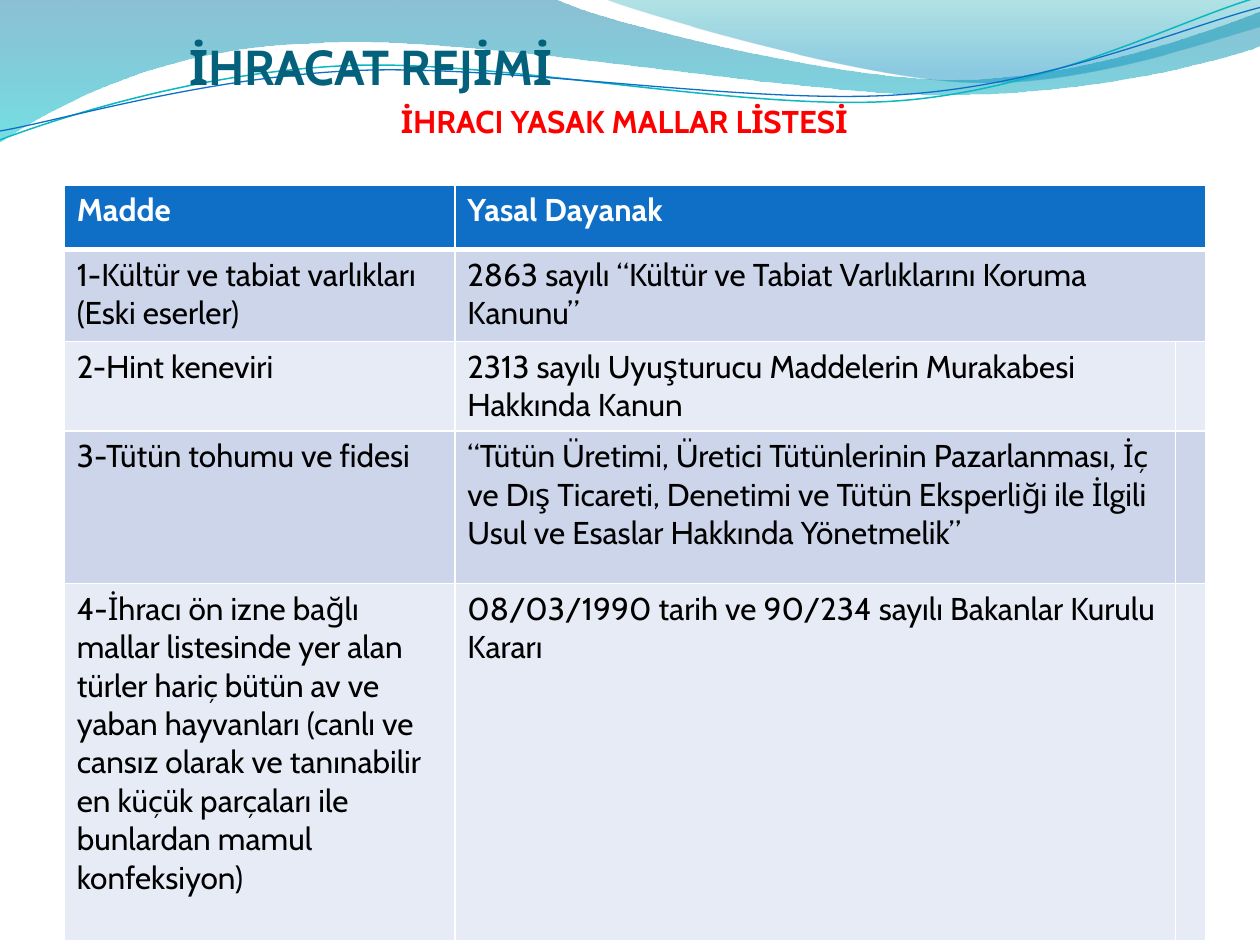
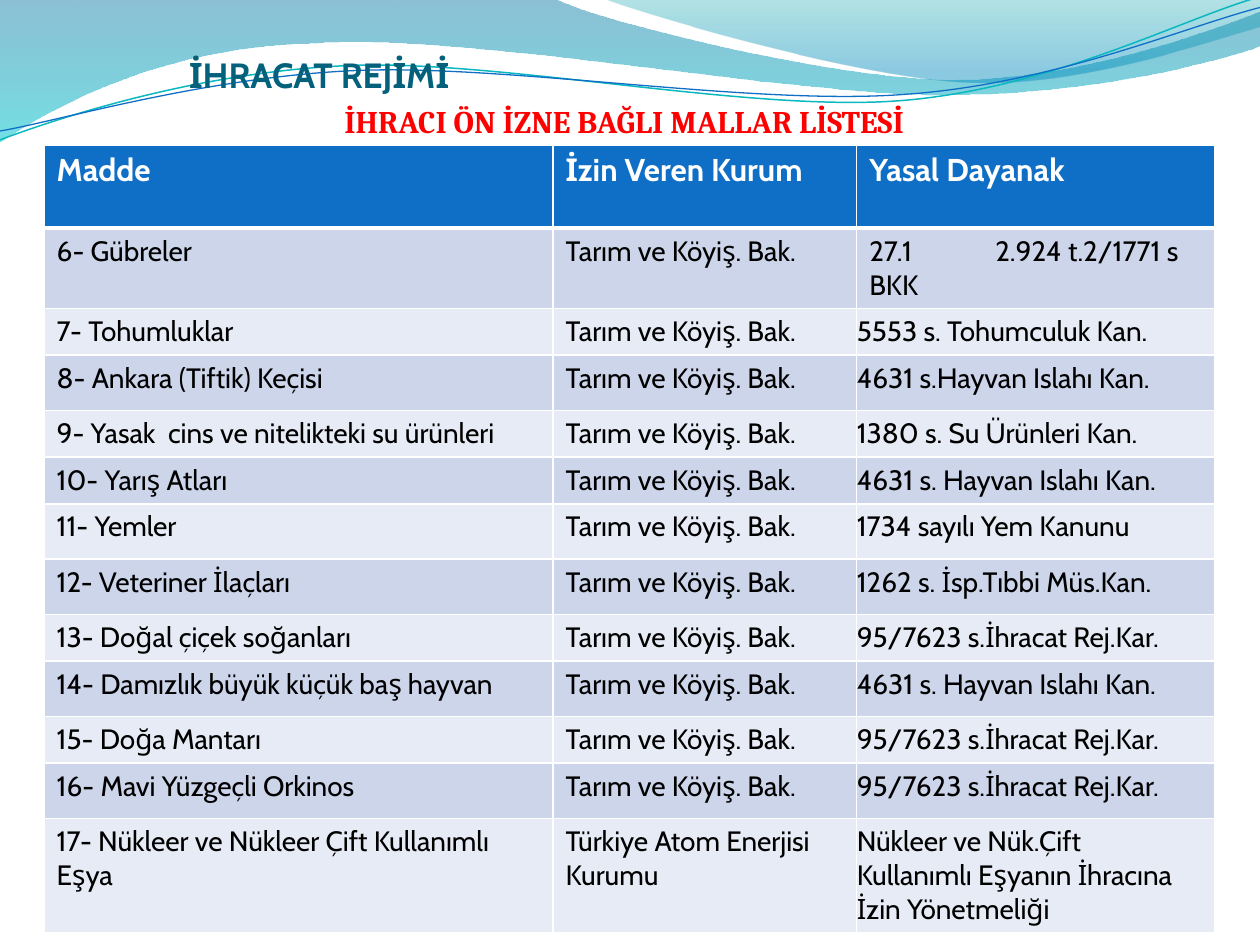
import math

import pptx
import pptx.util
import pptx.dml.color
import pptx.enum.text
import pptx.oxml
import pptx.oxml.ns

Inches = pptx.util.Inches
Pt = pptx.util.Pt
ALIGN = pptx.enum.text.PP_ALIGN
ANCHOR = pptx.enum.text.MSO_ANCHOR
qn = pptx.oxml.ns.qn
NS = pptx.oxml.ns.nsdecls("a")

COLORS = {
    "title": "04617B", "alert": "FF0000", "text": "000000", "white": "FFFFFF",
    "head": "0F6FC6", "odd": "CCD5EA", "even": "E7EBF5",
    "deep": "0074A1", "aqua": "00C6CF", "teal": "00A1A9", "sky": "008BBF",
    "cyan": "0AB8BF",
}

# Each wave is a list of points: two for a line, six for a Bezier curve.
BAND = [(0, 0), (4.4, -0.01), (4.76, 0.17, 6.64, 0.63, 7.58, 0.63),
        (8.53, 0.63, 9.58, 0.26, 10, 0.09), (10.01, 0.36),
        (9.83, 0.44, 8.7, 0.76, 7.46, 0.75), (6.22, 0.75, 3.82, 0.28, 2.57, 0.34),
        (1.29, 0.36, 0.46, 0.83, -0.01, 1.13), (0, 0)]
CREST = [(4.79, -0.01), (5.09, 0.11, 6.82, 0.62, 7.69, 0.65),
         (8.56, 0.69, 9.61, 0.32, 10, 0.21), (10, 0), (4.79, -0.01)]
UPPER = [(0, 1.11), (0.48, 0.93, 1.58, 0.57, 2.77, 0.52),
         (3.95, 0.47, 5.93, 0.89, 7.13, 0.8), (8.33, 0.71, 9.38, 0.15, 9.98, -0.02)]
LOWER = [(0, 1.04), (0.47, 0.96, 1.64, 0.61, 2.83, 0.56),
         (4.03, 0.51, 5.97, 0.84, 7.17, 0.75), (8.36, 0.67, 9.41, 0.21, 10, 0.06)]
TILT = 2.7

BANNED = [
    ["Madde", "Yasal Dayanak", ""],
    ["1-Kültür ve tabiat varlıkları (Eski eserler)",
     "2863 sayılı “Kültür ve Tabiat Varlıklarını Koruma Kanunu”", ""],
    ["2-Hint keneviri",
     "2313 sayılı Uyuşturucu Maddelerin Murakabesi Hakkında Kanun", ""],
    ["3-Tütün tohumu ve fidesi",
     "“Tütün Üretimi, Üretici Tütünlerinin Pazarlanması, İç ve Dış Ticareti, "
     "Denetimi ve Tütün Eksperliği ile İlgili Usul ve Esaslar Hakkında Yönetmelik”", ""],
    ["4-İhracı ön izne bağlı mallar listesinde yer alan türler hariç bütün av ve "
     "yaban hayvanları (canlı ve cansız olarak ve tanınabilir en küçük parçaları "
     "ile bunlardan mamul konfeksiyon)",
     "08/03/1990 tarih ve 90/234 sayılı Bakanlar Kurulu Kararı", ""],
]

FARM = "Tarım ve Köyiş. Bak."
PERMIT = [
    ["Madde", "İzin Veren Kurum", "Yasal Dayanak"],
    ["6- Gübreler", FARM, "27.1\t2.924 t.2/1771 s BKK"],
    ["7- Tohumluklar", FARM, "5553 s. Tohumculuk Kan."],
    ["8- Ankara (Tiftik) Keçisi", FARM, "4631 s.Hayvan Islahı Kan."],
    ["9- Yasak  cins ve nitelikteki su ürünleri", FARM, "1380 s. Su Ürünleri Kan."],
    ["10- Yarış Atları", FARM, "4631 s. Hayvan Islahı Kan."],
    ["11- Yemler", FARM, "1734 sayılı Yem Kanunu"],
    ["12- Veteriner İlaçları", FARM, "1262 s. İsp.Tıbbi Müs.Kan."],
    ["13- Doğal çiçek soğanları", FARM, "95/7623 s.İhracat Rej.Kar."],
    ["14- Damızlık büyük küçük baş hayvan", FARM, "4631 s. Hayvan Islahı Kan."],
    ["15- Doğa Mantarı", FARM, "95/7623 s.İhracat Rej.Kar."],
    ["16- Mavi Yüzgeçli Orkinos", FARM, "95/7623 s.İhracat Rej.Kar."],
    ["17- Nükleer ve Nükleer Çift Kullanımlı Eşya", "Türkiye Atom Enerjisi Kurumu",
     "Nükleer ve Nük.Çift Kullanımlı Eşyanın İhracına İzin Yönetmeliği"],
]


def tint(name):
    return pptx.dml.color.RGBColor.from_string(COLORS[name])


def write(frame, text, size=18, color="text", font="Cabin", bold=False, align=ALIGN.LEFT):
    """Fill the first paragraph; a tab in the text leads to one inch."""
    para = frame.paragraphs[0]
    para.alignment = align
    if "\t" in text:
        para._p.get_or_add_pPr().append(pptx.oxml.parse_xml(
            f'<a:tabLst {NS}><a:tab pos="{Inches(1)}" algn="l"/></a:tabLst>'))
    run = para.add_run()
    run.text = text
    run.font.name = font
    run.font.size = Pt(size)
    run.font.bold = bold
    run.font.color.rgb = tint(color)
    return para


def place(shape, left, top, width, height):
    shape.left, shape.top = Inches(left), Inches(top)
    shape.width, shape.height = Inches(width), Inches(height)


def turn(point, pivot, angle):
    """Turn a point clockwise about a pivot."""
    x, y = point[0] - pivot[0], point[1] - pivot[1]
    sin, cos = math.sin(math.radians(angle)), math.cos(math.radians(angle))
    return pivot[0] + x * cos - y * sin, pivot[1] + x * sin + y * cos


def draw(slide, parts, close=False, pivot=(0, 0), angle=0):
    """Build lines through all points, then bend each triple into a curve."""
    dots = [turn(part[i:i + 2], pivot, angle) for part in parts for i in range(0, len(part), 2)]
    dots = [(Inches(x), Inches(y)) for x, y in dots]
    pen = slide.shapes.build_freeform(*dots[0], scale=1.0)
    pen.add_line_segments(dots[1:], close=close)
    shape = pen.convert_to_shape()
    shape.shadow.inherit = False
    shape.rotation = -angle % 360
    lines = iter(list(shape.element.spPr.iter(qn("a:lnTo"))))
    for part in parts[1:]:
        line = next(lines)
        if len(part) == 6:
            curve = pptx.oxml.parse_xml(f"<a:cubicBezTo {NS}/>")
            line.addprevious(curve)
            for item in (line, next(lines), next(lines)):
                curve.append(item[0])
                item.getparent().remove(item)
    return shape


def add_wave(slide, parts, stops):
    """Add a filled wave; each stop is colour, position and opacity in percent."""
    shape = draw(slide, parts, close=True)
    shape.line.fill.background()
    shape.fill.gradient()
    shape.fill.gradient_angle = 270
    for stop, (color, spot, _) in zip(shape.fill.gradient_stops, stops):
        stop.color.rgb = tint(color)
        stop.position = spot / 100
    marks = list(shape.element.spPr.iter(qn("a:srgbClr")))
    for mark, (_, _, alpha) in zip(marks, stops):
        mark.append(pptx.oxml.parse_xml(f'<a:alpha {NS} val="{alpha * 1000}"/>'))
    return shape


def add_curve(slide, parts, pivot, color, width):
    shape = draw(slide, parts, pivot=pivot, angle=TILT)
    shape.fill.background()
    shape.line.color.rgb = tint(color)
    shape.line.width = Pt(width)
    return shape


def add_waves(slide, layout):
    """Draw the waves and hand them to the layout, behind its placeholders."""
    waves = [
        add_wave(slide, BAND, [("deep", 0, 45), ("aqua", 100, 55)]),
        add_wave(slide, CREST, [("teal", 0, 30), ("sky", 80, 45)]),
        add_curve(slide, UPPER, (4.99, 0.58), "cyan", 0.85),
        add_curve(slide, LOWER, (5, 0.59), "head", 0.75),
    ]
    for index, wave in enumerate(waves, 2):
        layout.shapes.element.insert(index, wave.element)


def add_heads(slide, size, topic, font):
    title, body = slide.shapes.title, slide.placeholders[1]
    place(title, 0.5, 0.3, 8.17, 0.46)
    frame = title.text_frame
    frame.auto_size = pptx.enum.text.MSO_AUTO_SIZE.NONE
    frame.vertical_anchor = ANCHOR.BOTTOM
    frame.margin_left = frame.margin_right = frame.margin_bottom = 0
    frame.margin_top = Inches(0.05)
    write(frame, "\tİHRACAT REJİMİ", size=size, color="title", bold=True)

    place(body, 0.5, 0.76, 8.91, 6.46)
    body.text_frame.auto_size = pptx.enum.text.MSO_AUTO_SIZE.NONE
    para = write(body.text_frame, topic, color="alert", font=font, bold=True,
                 align=ALIGN.CENTER)
    para.space_before = Pt(3.6)
    props = para._p.get_or_add_pPr()
    props.set("marL", str(Inches(0.3)))
    props.set("indent", str(-Inches(0.3)))
    props.append(pptx.oxml.parse_xml(f"<a:buNone {NS}/>"))


def edge(cell, head):
    """Give a cell white borders, thicker below the header."""
    props = cell._tc.get_or_add_tcPr()
    for index, side in enumerate("LRTB"):
        width = Pt(3 if head and side == "B" else 1)
        props.insert(index, pptx.oxml.parse_xml(
            f'<a:ln{side} {NS} w="{width}"><a:solidFill>'
            f'<a:srgbClr val="{COLORS["white"]}"/></a:solidFill></a:ln{side}>'))


def add_grid(slide, left, top, cols, rows, data, size):
    frame = slide.shapes.add_table(len(rows), len(cols), Inches(left), Inches(top),
                                   Inches(sum(cols)), Inches(sum(rows)))
    table = frame.table
    for col, width in zip(table.columns, cols):
        col.width = Inches(width)
    for row, height in zip(table.rows, rows):
        row.height = Inches(height)
    for r, line in enumerate(data):
        head = r == 0
        for c, text in enumerate(line):
            cell = table.cell(r, c)
            cell.fill.solid()
            cell.fill.fore_color.rgb = tint("head" if head else "odd" if r % 2 else "even")
            edge(cell, head)
            if text:
                write(cell.text_frame, text, size=18 if head else size,
                      color="white" if head else "text", bold=head)
    return table


def main():
    prs = pptx.Presentation()
    prs.slide_width, prs.slide_height = Inches(10), Inches(7.5)
    layout = prs.slide_layouts[1]

    slide = prs.slides.add_slide(layout)
    add_waves(slide, layout)
    add_heads(slide, 28, "İHRACI YASAK MALLAR LİSTESİ", "Cabin")
    table = add_grid(slide, 0.51, 1.47, [3.1, 5.72, 0.24],
                     [0.51, 0.73, 0.71, 1.21, 2.84], BANNED, 18)
    for r in (0, 1):
        table.cell(r, 1).merge(table.cell(r, 2))

    slide = prs.slides.add_slide(layout)
    add_heads(slide, 20, "İHRACI ÖN İZNE BAĞLI MALLAR LİSTESİ", "Cambria")
    low, high = 0.37, 0.44
    rows = [0.66, 0.64, low, high, low, low, high, high, low, high, low, high, 0.9]
    table = add_grid(slide, 0.35, 1.15, [4.04, 2.41, 2.84], rows, PERMIT, 16)
    for r in range(2, len(rows)):
        table.cell(r, 2).margin_left = 0

    prs.save("out.pptx")


if __name__ == "__main__":
    main()
